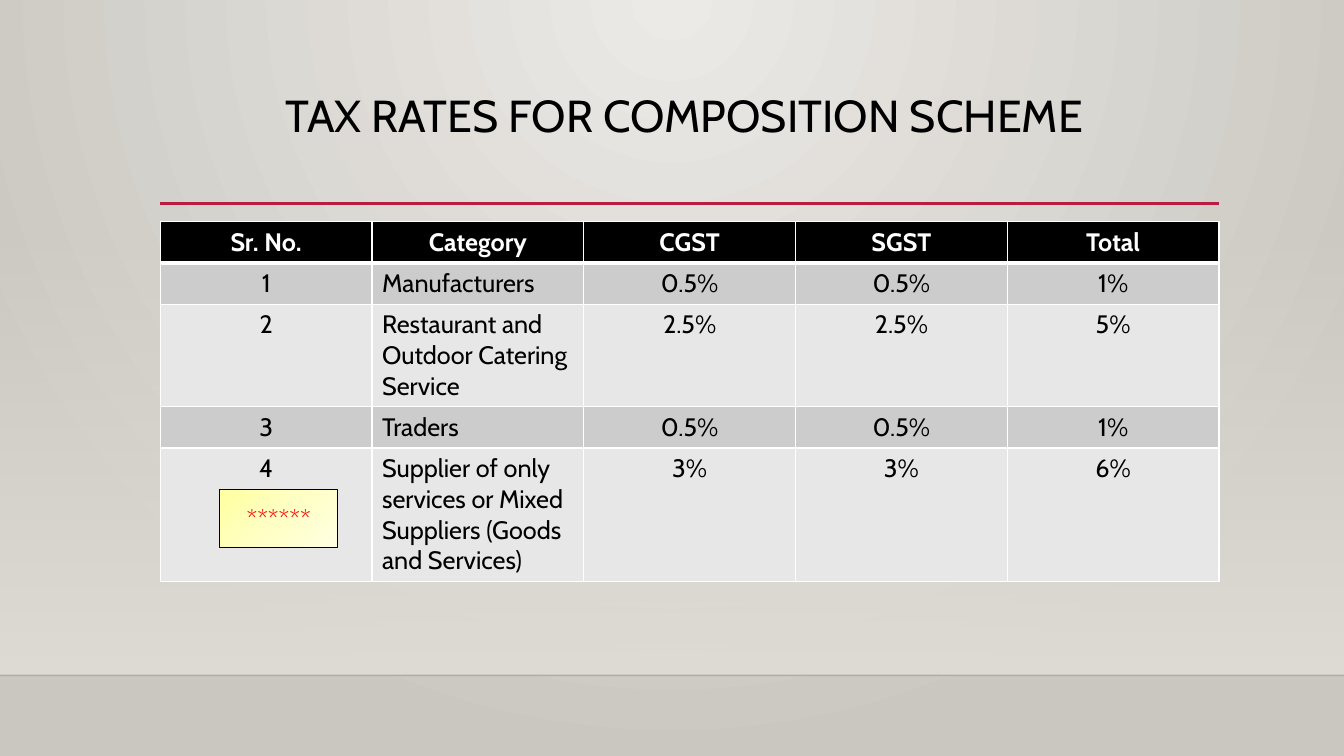
from lxml.etree import SubElement
from pptx import Presentation
from pptx.dml.color import RGBColor
from pptx.enum.shapes import MSO_CONNECTOR, MSO_SHAPE
from pptx.enum.text import MSO_ANCHOR, MSO_AUTO_SIZE, PP_ALIGN
from pptx.oxml.ns import qn
from pptx.util import Inches, Pt

HUES = {
    "black": "000000",
    "white": "FFFFFF",
    "red": "FF0000",
    "rule": "B71E42",
    "edge": "000001",
    "glow": "ECEAE7",
    "wall": "CAC7C1",
    "haze": "DFDBD5",
    "odd": "CCCCCC",
    "even": "E7E7E7",
    "note1": "FFFFA0",
    "note2": "FFFFC5",
    "note3": "FFFFE3",
}
FONT = "Cabin"
WIDTH, HEIGHT = 13.33, 7.5
RATES = [
    ("Sr. No.", "Category", "CGST", "SGST", "Total"),
    ("1", "Manufacturers", "0.5%", "0.5%", "1%"),
    ("2", "Restaurant and Outdoor Catering Service", "2.5%", "2.5%", "5%"),
    ("3", "Traders", "0.5%", "0.5%", "1%"),
    ("4", "Supplier of only services or Mixed Suppliers (Goods and Services)",
     "3%", "3%", "6%"),
]
ROWS = [0.41, 0.41, 1.01, 0.41, 1.31]


def hue(name):
    return RGBColor.from_string(HUES[name])


def write(frame, text, size=18, color="black", bold=False,
          align=PP_ALIGN.CENTER, space=None):
    para = frame.paragraphs[0]
    para.alignment = align
    if space:
        para.line_spacing = space
    run = para.add_run()
    run.text = text
    run.font.name = FONT
    run.font.size = Pt(size)
    run.font.bold = bold
    run.font.color.rgb = hue(color)


def tint(node, name, alpha=100):
    color = SubElement(node, qn("a:srgbClr"), val=HUES[name])
    if alpha < 100:
        SubElement(color, qn("a:alpha"), val=str(alpha * 1000))


def blend(props, stops, angle=None):
    solid = props.find(qn("a:solidFill"))
    grad = props.makeelement(qn("a:gradFill"), {"rotWithShape": "1"})
    props.replace(solid, grad)
    chain = SubElement(grad, qn("a:gsLst"))
    for place, name, alpha in stops:
        tint(SubElement(chain, qn("a:gs"), pos=str(place * 1000)), name, alpha)
    if angle is None:
        way = SubElement(grad, qn("a:path"), path="circle")
        SubElement(way, qn("a:fillToRect"), l="43000", t="0",
                   r="43000", b="100000")
    else:
        SubElement(grad, qn("a:lin"), ang=str(angle * 60000), scaled="0")


def block(slide, box, stops, angle):
    shape = slide.shapes.add_shape(MSO_SHAPE.RECTANGLE, *map(Inches, box))
    shape.shadow.inherit = False
    shape.fill.solid()
    blend(shape.element.spPr, stops, angle)
    shape.line.fill.background()
    return shape


def rule(slide, left, top, width, color, weight, alpha=100):
    line = slide.shapes.add_connector(
        MSO_CONNECTOR.STRAIGHT, Inches(left), Inches(top),
        Inches(left + width), Inches(top))
    line.line.width = Pt(weight)
    line.line.color.rgb = hue(color)
    props = line.element.spPr
    if alpha < 100:
        fill = props.find(qn("a:ln")).find(qn("a:solidFill"))
        fill.clear()
        tint(fill, color, alpha)
    SubElement(props, qn("a:effectLst"))


def border(cell, row):
    props = cell._tc.get_or_add_tcPr()
    for spot, side in enumerate("LRTB"):
        thick = (row, side) in ((0, "B"), (1, "T"))
        line = props.makeelement(
            qn("a:ln" + side), {"w": str(Pt(3 if thick else 1))})
        props.insert(spot, line)
        tint(SubElement(line, qn("a:solidFill")), "white")


def stage(slide, box):
    left, top, width, height = box
    slide.background.fill.solid()
    props = slide.element.cSld.find(qn("p:bg")).find(qn("p:bgPr"))
    blend(props, [(0, "glow", 100), (100, "wall", 100)])
    floor = top + height - 0.8
    block(slide, (left, floor - 4.49, width, 4.49),
          [(0, "haze", 0), (100, "haze", 100)], 90)
    rule(slide, left, floor, width, "edge", 1, 20)


def head(slide, box):
    left, top, width, height = box
    title = slide.shapes.title
    title.left, title.top, title.width, title.height = map(Inches, box)
    frame = title.text_frame
    frame.word_wrap = True
    frame.auto_size = MSO_AUTO_SIZE.NONE
    frame.vertical_anchor = MSO_ANCHOR.TOP
    write(frame, "TAX RATES FOR COMPOSITION SCHEME ", size=32, space=0.9)
    rule(slide, left, top + height - 0.01, width, "rule", 2.5)


def grid(slide, box):
    table = slide.shapes.add_table(
        len(RATES), len(RATES[0]), *map(Inches, box)).table
    for col in table.columns:
        col.width = Inches(box[2] / len(RATES[0]))
    for row, items in enumerate(RATES):
        table.rows[row].height = Inches(ROWS[row])
        top = row == 0
        shade = "black" if top else "odd" if row % 2 else "even"
        for col, text in enumerate(items):
            cell = table.cell(row, col)
            cell.fill.solid()
            cell.fill.fore_color.rgb = hue(shade)
            border(cell, row)
            side = PP_ALIGN.LEFT if col == 1 and not top else PP_ALIGN.CENTER
            write(cell.text_frame, text, bold=top, align=side,
                  color="white" if top else "black")


def note(slide, box):
    shape = block(slide, box, [(0, "note1", 100), (50, "note2", 100),
                               (100, "note3", 100)], 45)
    shape.line.color.rgb = hue("black")
    shape.line.width = Pt(0.75)
    shape.text_frame.vertical_anchor = MSO_ANCHOR.MIDDLE
    write(shape.text_frame, "******", color="red")


def main():
    deck = Presentation()
    deck.slide_width, deck.slide_height = Inches(WIDTH), Inches(HEIGHT)
    slide = deck.slides.add_slide(deck.slide_layouts[5])
    stage(slide, (0, 0, WIDTH, HEIGHT))
    head(slide, (1.59, 0.88, 10.5, 1.15))
    grid(slide, (1.59, 2.2, 10.5, sum(ROWS)))
    note(slide, (2.18, 4.86, 1.17, 0.57))
    deck.save("out.pptx")


if __name__ == "__main__":
    main()
